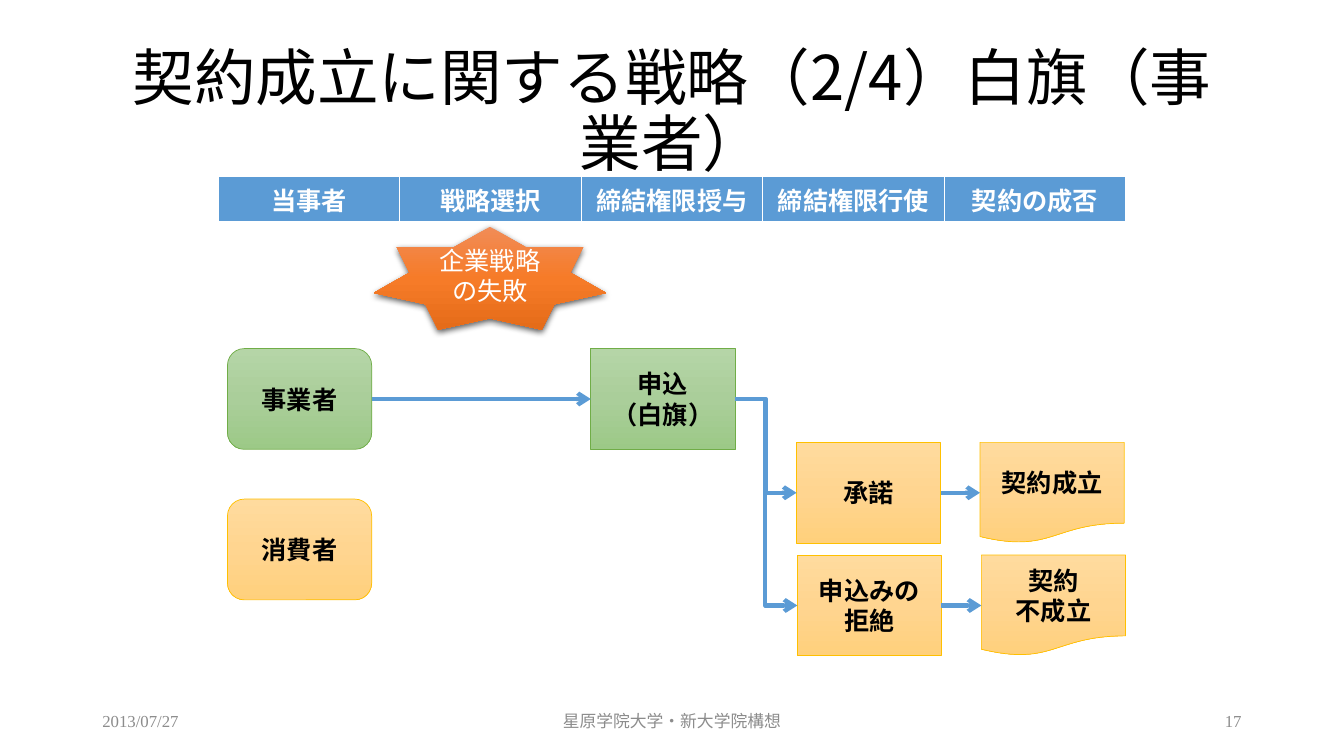
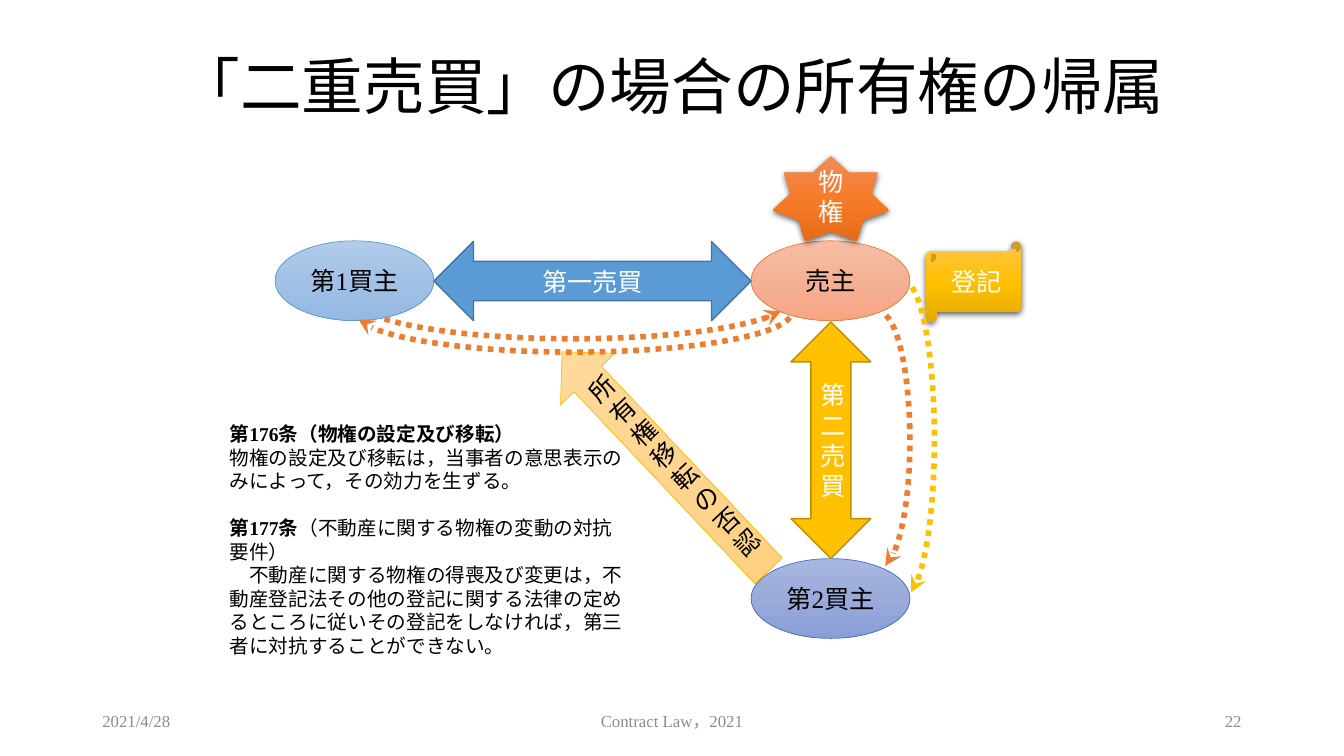
"""Builds two slides on contract strategy and double sale."""
from copy import deepcopy

from lxml.etree import SubElement
from pptx import Presentation
from pptx.dml.color import RGBColor as Rgb
from pptx.enum.dml import MSO_LINE as Dash
from pptx.enum.shapes import MSO_CONNECTOR as Link, MSO_SHAPE as Form
from pptx.enum.text import MSO_ANCHOR as Anchor, MSO_AUTO_SIZE as Auto, PP_ALIGN as Align
from pptx.oxml.ns import qn
from pptx.util import Pt

FONT = "Times New Roman"
HEAD = "Noto Sans CJK JP"
BLACK = Rgb(0x00, 0x00, 0x00)
WHITE = Rgb(0xFF, 0xFF, 0xFF)
GRAY = Rgb(0x8C, 0x8C, 0x8C)
BLUE = Rgb(0x5B, 0x9B, 0xD5)
NAVY = Rgb(0x43, 0x73, 0x9E)
INDIGO = Rgb(0x44, 0x72, 0xC4)
GREEN = Rgb(0x70, 0xAD, 0x47)
GOLD = Rgb(0xFF, 0xC0, 0x00)
BRONZE = Rgb(0xBD, 0x8E, 0x00)
ORANGE = Rgb(0xED, 0x7D, 0x31)
MINT = Rgb(0xB5, 0xD5, 0xA7), Rgb(0xAA, 0xCE, 0x9A), Rgb(0x9C, 0xC9, 0x87)
CREAM = Rgb(0xFF, 0xDB, 0x9E), Rgb(0xFF, 0xD5, 0x90), Rgb(0xFF, 0xD0, 0x7C)
SKY = Rgb(0xB1, 0xCB, 0xE9), Rgb(0xA3, 0xC1, 0xE5), Rgb(0x93, 0xB9, 0xE4)
PEACH = Rgb(0xF7, 0xBD, 0xA5), Rgb(0xF5, 0xB1, 0x96), Rgb(0xF8, 0xA5, 0x82)
LILAC = Rgb(0xA8, 0xB7, 0xDF), Rgb(0x9A, 0xAB, 0xD9), Rgb(0x88, 0x9E, 0xD7)
FLAME = Rgb(0xF1, 0x8C, 0x57), Rgb(0xF6, 0x7B, 0x28), Rgb(0xE5, 0x6C, 0x19)
AMBER = Rgb(0xFF, 0xC6, 0x4B), Rgb(0xFF, 0xC0, 0x00), Rgb(0xE3, 0xAB, 0x00)


def style(para, size=18, color=BLACK, bold=False, align=Align.CENTER, font=FONT):
    """Set the font and alignment of a paragraph."""
    para.alignment = align
    para.font.name = font
    para.font.size = Pt(size)
    para.font.bold = bold
    para.font.color.rgb = color


def write(frame, *texts, **look):
    """Fill a text frame with one paragraph per text."""
    frame.word_wrap = True
    for i, text in enumerate(texts):
        para = frame.add_paragraph() if i else frame.paragraphs[0]
        para.text = text
        style(para, **look)


def label(slide, left, top, width, height, text, **look):
    """Add a text box centred in height."""
    frame = slide.shapes.add_textbox(Pt(left), Pt(top), Pt(width), Pt(height)).text_frame
    frame.vertical_anchor = Anchor.MIDDLE
    write(frame, text, **look)


def start(deck, title, height, date, foot, page):
    """Add a slide with its title and footer."""
    slide = deck.slides.add_slide(deck.slide_layouts[5])
    head = slide.shapes.title
    head.left, head.top, head.width, head.height = Pt(66), Pt(29), Pt(828), Pt(height)
    write(head.text_frame, title, size=44, font=HEAD)
    head.text_frame.auto_size = Auto.NONE
    head.text_frame.vertical_anchor = Anchor.MIDDLE
    head.text_frame.paragraphs[0].line_spacing = 0.9
    for left, width, text, align in (
        (66, 216, date, Align.LEFT),
        (318, 324, foot, Align.CENTER),
        (678, 216, page, Align.RIGHT),
    ):
        label(slide, left, 500.5, width, 29, text, size=12, color=GRAY, align=align)
    return slide


def blend(shape, tints):
    """Fill a shape with a downward three-stop gradient."""
    fill = shape.fill
    fill.gradient()
    fill.gradient_angle = 270
    stops = shape._element.spPr.find(".//" + qn("a:gsLst"))
    stops.insert(1, deepcopy(stops[0]))
    for stop, place, tint in zip(fill.gradient_stops, (0, 0.5, 1), tints):
        stop.position = place
        stop.color.rgb = tint


def cast(shape):
    """Give a shape a soft shadow below it."""
    effects = shape._element.spPr.find(qn("a:effectLst"))
    shade = SubElement(effects, qn("a:outerShdw"), blurRad=str(Pt(4.5)),
                       dist=str(Pt(1.5)), dir="5400000", rotWithShape="0")
    color = SubElement(shade, qn("a:srgbClr"), val=str(BLACK))
    SubElement(color, qn("a:alpha"), val="63000")


def block(slide, form, left, top, width, height, text, fill, edge=None, weight=0.5, **look):
    """Add a filled shape with text; without an edge it has a shadow."""
    shape = slide.shapes.add_shape(form, Pt(left), Pt(top), Pt(width), Pt(height))
    shape.shadow.inherit = False
    if isinstance(fill, Rgb):
        shape.fill.solid()
        shape.fill.fore_color.rgb = fill
    else:
        blend(shape, fill)
    if edge is None:
        shape.line.fill.background()
        cast(shape)
    else:
        shape.line.color.rgb = edge
        shape.line.width = Pt(weight)
    write(shape.text_frame, text, **look)
    return shape


def tip(shape, end, kind):
    """Put an arrowhead on one end of a line."""
    SubElement(shape.line._get_or_add_ln(), qn("a:" + end), type=kind)


def wire(slide, kind, x1=0, y1=0, x2=0, y2=0):
    """Add a blue arrow between two points."""
    line = slide.shapes.add_connector(kind, Pt(x1), Pt(y1), Pt(x2), Pt(y2))
    SubElement(line._element.spPr, qn("a:effectLst"))
    line.line.color.rgb = BLUE
    line.line.width = Pt(3)
    tip(line, "tailEnd", "arrow")
    return line


def join(slide, first, last, kind=Link.STRAIGHT):
    """Join the right side of a box to the left side of another."""
    line = wire(slide, kind)
    line.begin_connect(first, 3)
    line.end_connect(last, 1)


def drop(slide, x1, y1, x2, y2):
    """Add an arrow that goes down and then right."""
    midx, midy = (x1 + x2) / 2, (y1 + y2) / 2
    wide, high = (y2 - y1) / 2, (x2 - x1) / 2
    line = wire(slide, Link.ELBOW, midx + wide, midy - high, midx - wide, midy + high)
    spot = line._element.spPr
    spot.find(qn("a:xfrm")).set("rot", "16200000")
    spot.find(qn("a:prstGeom")).set("prst", "bentConnector2")


def curve(slide, left, top, width, height, span, color, end="tailEnd"):
    """Add a dotted arc with an arrowhead."""
    arc = slide.shapes.add_shape(Form.ARC, Pt(left), Pt(top), Pt(width), Pt(height))
    arc.shadow.inherit = False
    arc.fill.background()
    arc.adjustments[0], arc.adjustments[1] = span
    arc.line.color.rgb = color
    arc.line.width = Pt(4)
    arc.line.dash_style = Dash.ROUND_DOT
    tip(arc, end, "stealth")


def table(slide, heads):
    """Add the row of column headings."""
    grid = slide.shapes.add_table(1, len(heads), Pt(156), Pt(126), Pt(648), Pt(32)).table
    for cell, head in zip(grid.rows[0].cells, heads):
        cell.fill.solid()
        cell.fill.fore_color.rgb = BLUE
        write(cell.text_frame, head, color=WHITE, bold=True)


def note(slide, top, height, head, topic, body, bold=False):
    """Add an article with a bold number, its topic and its body."""
    frame = slide.shapes.add_textbox(Pt(157), Pt(top), Pt(296), Pt(height)).text_frame
    write(frame, "", body, size=14, align=Align.LEFT)
    for text, heavy in ((head, True), (topic, bold)):
        run = frame.paragraphs[0].add_run()
        run.text = text
        run.font.bold = heavy


def flag(deck):
    """Build the slide on the white flag strategy."""
    slide = start(deck, "契約成立に関する戦略（2/4）白旗（事業者）", 104.5,
                  "2013/07/27", "星原学院大学・新大学院構想", "17")
    table(slide, ("当事者", "戦略選択", "締結権限授与", "締結権限行使", "契約の成否"))
    firm, buyer, offer, accept, done, refuse, fail = [
        block(slide, form, left, top, 103, 72, text, fill, edge, bold=True)
        for form, left, top, text, fill, edge in (
            (Form.ROUNDED_RECTANGLE, 162.5, 249, "事業者", MINT, GREEN),
            (Form.ROUNDED_RECTANGLE, 162.5, 356.5, "消費者", CREAM, GOLD),
            (Form.RECTANGLE, 422, 249, "申込\n（白旗）", MINT, GREEN),
            (Form.RECTANGLE, 569, 316, "承諾", CREAM, GOLD),
            (Form.FLOWCHART_DOCUMENT, 700, 316, "契約成立", CREAM, GOLD),
            (Form.RECTANGLE, 569.5, 396.5, "申込みの\n拒絶", CREAM, GOLD),
            (Form.FLOWCHART_DOCUMENT, 701, 396.5, "契約\n不成立", CREAM, GOLD),
        )
    ]
    join(slide, firm, offer)
    join(slide, offer, accept, Link.ELBOW)
    block(slide, Form.STAR_7_POINT, 267, 162, 166, 73.5, "企業戦略の失敗", FLAME, color=WHITE)
    join(slide, refuse, fail)
    join(slide, accept, done)
    drop(slide, 546.5, 285, 569.5, 432.5)


def sale(deck):
    """Build the slide on the double sale."""
    slide = start(deck, "「二重売買」の場合の所有権の帰属", 70,
                  "2021/4/28", "Contract Law，2021", "22")
    for left, top, text, fill, edge in (
        (196.5, 172, "第1買主", SKY, BLUE),
        (536.5, 172, "売主", PEACH, ORANGE),
        (536.5, 399, "第2買主", LILAC, INDIGO),
    ):
        block(slide, Form.OVAL, left, top, 113.5, 57, text, fill, edge)
    block(slide, Form.HORIZONTAL_SCROLL, 661.5, 172.5, 68, 57.5, "登記", AMBER, color=WHITE)
    deny = block(slide, Form.UP_ARROW, 448.5, 222, 53.5, 215, "所有権移転の否認", CREAM, GOLD)
    deny.rotation = 316.7
    block(slide, Form.STAR_7_POINT, 552, 111.5, 83, 60.5, "物権", FLAME, color=WHITE)
    block(slide, Form.LEFT_RIGHT_ARROW, 310, 172.5, 226.5, 56.5, "第一売買",
          BLUE, NAVY, 1, color=WHITE)
    block(slide, Form.UP_DOWN_ARROW, 565, 230, 57, 169, "第二売買",
          GOLD, BRONZE, 1, color=WHITE)
    curve(slide, 253.5, 194.5, 312, 57, (0.84, 106.86), ORANGE)
    curve(slide, 253.5, 185, 312, 57, (2.03, 104.76), ORANGE, "headEnd")
    curve(slide, 606, 223, 44, 183, (163.9, 52.34), ORANGE)
    curve(slide, 623.5, 201, 44, 225.5, (163.9, 52.34), GOLD)
    note(slide, 365, 109, "第177条", "（不動産に関する物権の変動の対抗要件）",
         "　不動産に関する物権の得喪及び変更は，不動産登記法その他の登記に関する法律の"
         "定めるところに従いその登記をしなければ，第三者に対抗することができない。")
    note(slide, 298, 58.5, "第176条", "（物権の設定及び移転）",
         "物権の設定及び移転は，当事者の意思表示のみによって，その効力を生ずる。", True)


def main():
    """Build and save the deck."""
    deck = Presentation()
    deck.slide_width, deck.slide_height = Pt(960), Pt(540)
    flag(deck)
    sale(deck)
    deck.save("out.pptx")


if __name__ == "__main__":
    main()
